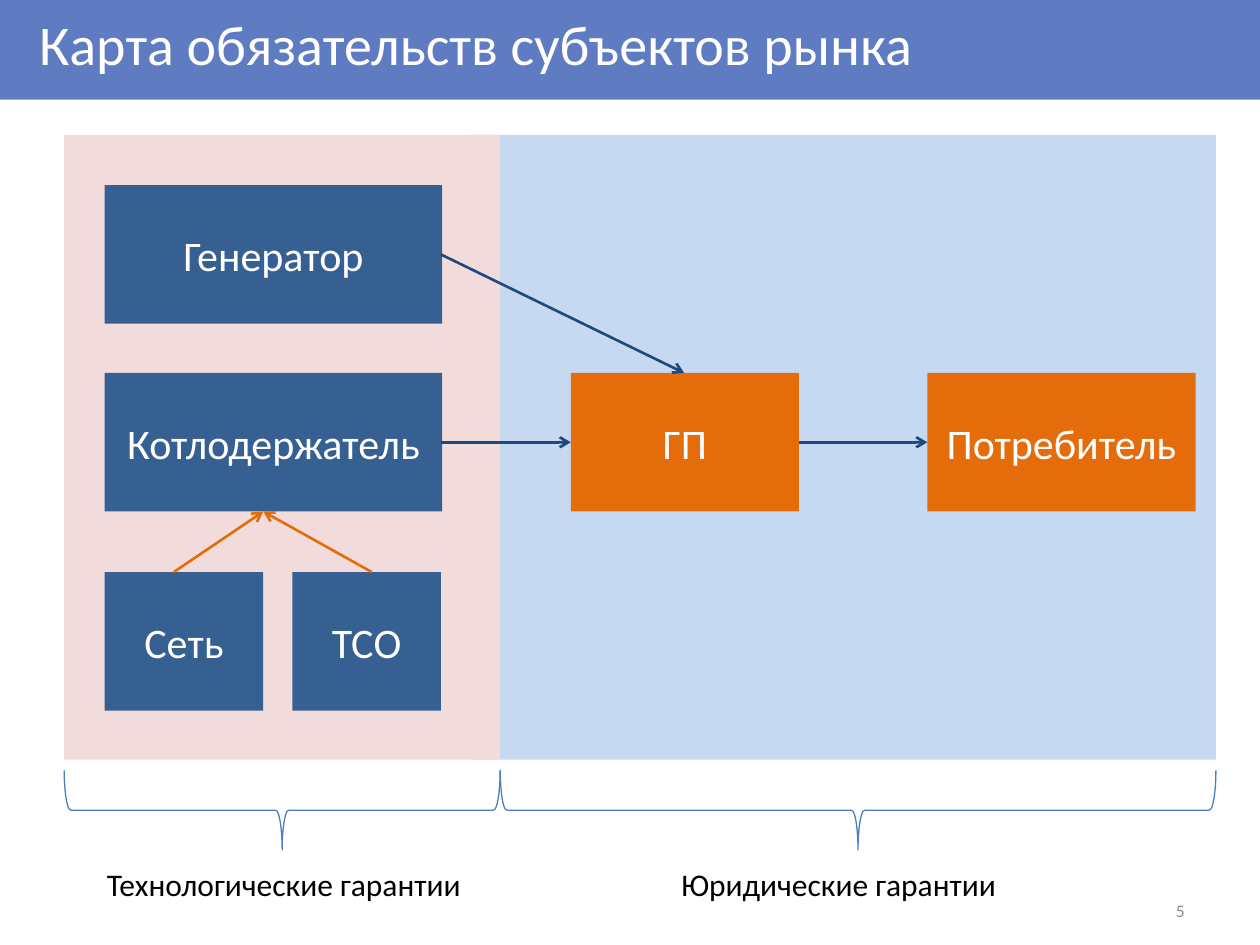
"""Build the slide mapping the obligations of market participants."""
from lxml.etree import SubElement
from pptx import Presentation
from pptx.dml.color import RGBColor
from pptx.enum.shapes import MSO_CONNECTOR as CONN, MSO_SHAPE as SHAPE
from pptx.enum.text import MSO_ANCHOR as ANCHOR, MSO_AUTO_SIZE as FIT, PP_ALIGN as ALIGN
from pptx.oxml.ns import qn
from pptx.util import Inches, Pt

HEADER = RGBColor(0x5F, 0x7C, 0xC3)
PALE_BLUE = RGBColor(0xC6, 0xD9, 0xF1)
PALE_PINK = RGBColor(0xF2, 0xDC, 0xDB)
BLUE = RGBColor(0x37, 0x60, 0x92)
ORANGE = RGBColor(0xE4, 0x6C, 0x0A)
NAVY = RGBColor(0x1F, 0x49, 0x7D)
BRACE = RGBColor(0x4B, 0x7E, 0xBC)
WHITE = RGBColor(0xFF, 0xFF, 0xFF)
BLACK = RGBColor(0, 0, 0)
GREY = RGBColor(0x8C, 0x8C, 0x8C)

BOX_H = 1.1
ROW_1, ROW_2, ROW_3 = 1.47, 2.96, 4.54
MID_2 = ROW_2 + BOX_H / 2
HUB = (2.09, ROW_2 + BOX_H)


def set_text(tf, text, size, color, align=ALIGN.LEFT, anchor=ANCHOR.MIDDLE):
    """Write one formatted paragraph and return it."""
    for name, value in {"word_wrap": True, "vertical_anchor": anchor}.items():
        setattr(tf, name, value)
    p = tf.paragraphs[0]
    p.alignment = align
    r = p.add_run()
    r.text = text
    for name, value in {"name": "Calibri", "size": Pt(size)}.items():
        setattr(r.font, name, value)
    r.font.color.rgb = color
    return p


def add_title(s, text):
    """Fill the title placeholder and raise it above the header band."""
    sp = s.shapes.title
    s.shapes._spTree.append(sp._element)
    frame = {"left": 0.27, "top": -0.01, "width": 8.66, "height": 0.79}
    for name, value in frame.items():
        setattr(sp, name, Inches(value))
    tf = sp.text_frame
    tf.auto_size = FIT.NONE
    for side in ("left", "top", "right", "bottom"):
        setattr(tf, f"margin_{side}", Inches(0.04))
    set_text(tf, text, 32, WHITE).line_spacing = 0.85


def add_box(s, x, y, w, h, fill, text=""):
    """Add a filled rectangle with an optional centred label."""
    sp = s.shapes.add_shape(SHAPE.RECTANGLE, *map(Inches, (x, y, w, h)))
    sp.shadow.inherit = False
    sp.fill.solid()
    sp.fill.fore_color.rgb = fill
    sp.line.fill.background()
    if text:
        set_text(sp.text_frame, text, 24, WHITE, ALIGN.CENTER)


def add_arrow(s, start, end, color):
    """Add a straight arrow from start to end."""
    c = s.shapes.add_connector(CONN.STRAIGHT, *map(Inches, (*start, *end)))
    c.line.color.rgb = color
    c.line.width = Pt(1.5)
    props = c._element.spPr
    SubElement(props.find(qn("a:ln")), qn("a:tailEnd"), type="arrow")
    SubElement(props, qn("a:effectLst"))


def add_brace(s, left, right):
    """Add a brace that opens upwards and spans left to right."""
    depth, mid_y, length = 0.63, 6.43, right - left
    x, y = (left + right - depth) / 2, mid_y - length / 2
    sp = s.shapes.add_shape(SHAPE.LEFT_BRACE, *map(Inches, (x, y, depth, length)))
    sp.rotation = 270
    sp.shadow.inherit = False
    sp.fill.background()
    sp.line.color.rgb = BRACE
    sp.line.width = Pt(0.75)


def add_label(s, x, y, w, h, text, size, color, **layout):
    """Add a text box."""
    sp = s.shapes.add_textbox(*map(Inches, (x, y, w, h)))
    set_text(sp.text_frame, text, size, color, **layout)


def main():
    """Compose and save the slide."""
    prs = Presentation()
    prs.slide_width, prs.slide_height = Inches(10), Inches(7.5)
    s = prs.slides.add_slide(prs.slide_layouts[5])

    add_box(s, 0, 0, 10, 0.79, HEADER)
    add_box(s, 3.74, 1.07, 5.91, 4.96, PALE_BLUE)
    add_box(s, 0.51, 1.07, 3.46, 4.96, PALE_PINK)
    add_title(s, "Карта обязательств субъектов рынка")

    for x, y, w, fill, text in (
        (0.83, ROW_1, 2.68, BLUE, "Генератор"),
        (0.83, ROW_2, 2.68, BLUE, "Котлодержатель"),
        (4.53, ROW_2, 1.81, ORANGE, "ГП"),
        (7.36, ROW_2, 2.13, ORANGE, "Потребитель"),
        (0.83, ROW_3, 1.26, BLUE, "Сеть"),
        (2.32, ROW_3, 1.18, BLUE, "ТСО"),
    ):
        add_box(s, x, y, w, BOX_H, fill, text)

    for start, end, color in (
        ((3.5, ROW_1 + BOX_H / 2), (5.43, ROW_2), NAVY),
        ((3.5, MID_2), (4.53, MID_2), NAVY),
        ((6.34, MID_2), (7.36, MID_2), NAVY),
        ((1.38, ROW_3), HUB, ORANGE),
        ((2.95, ROW_3), HUB, ORANGE),
    ):
        add_arrow(s, start, end, color)

    for left, right, x, text in (
        (0.51, 3.97, 0.75, "Технологические гарантии"),
        (3.97, 9.65, 5.31, "Юридические гарантии"),
    ):
        add_brace(s, left, right)
        add_label(s, x, 6.82, 3.31, 0.4, text, 18, BLACK, anchor=ANCHOR.TOP)
    add_label(s, 9.06, 7.11, 0.44, 0.24, "5", 10, GREY, align=ALIGN.RIGHT)

    prs.save("out.pptx")


if __name__ == "__main__":
    main()
